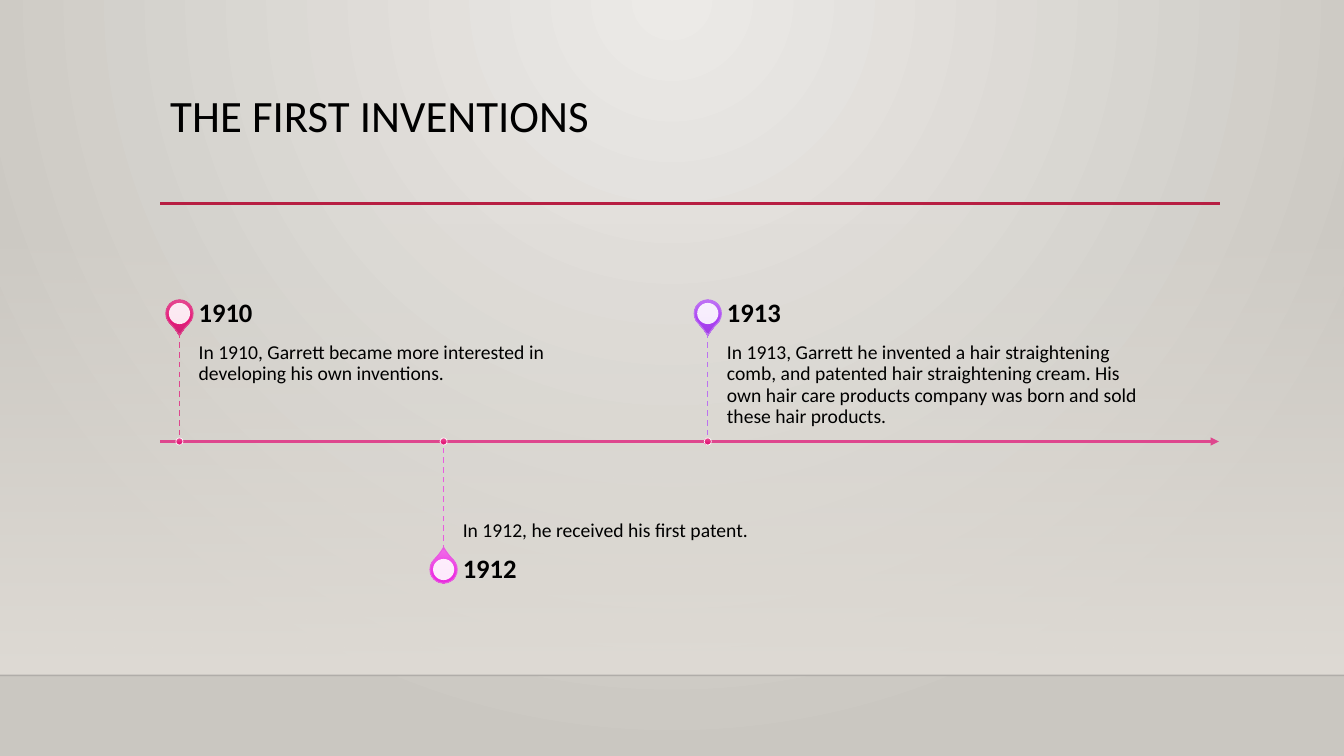
from lxml import etree
from pptx import Presentation
from pptx.dml.color import RGBColor
from pptx.enum import dml, shapes, text
from pptx.oxml.ns import qn
from pptx.util import Inches, Pt

TITLE = "THE FIRST INVENTIONS"
ROSE = [(0, "E75597"), (69, "E51A79"), (100, "CF2374")]
PINK = [(0, "F068E8"), (69, "ED2CE2"), (100, "E02BD5")]
VIOLET = [(0, "C57FF7"), (69, "AA41F3"), (100, "A13FE5")]
# year, text, line colour, pin gradient
EVENTS = [
    ("1910", "In 1910, Garrett became more interested in developing his own inventions.",
     "DE478E", ROSE),
    ("1912", "In 1912, he received his first patent.", "E85CE0", PINK),
    ("1913", "In 1913, Garrett he invented a hair straightening comb, and patented "
     "hair straightening cream. His own hair care products company was born and sold "
     "these hair products.", "BC72F0", VIOLET),
]
AXIS_Y, AXIS_LEFT, AXIS_RIGHT = 4.38, 1.59, 12.09
FIRST_X, STEP = 1.78, 2.62
STEM, YEAR_H, TEXT_W, TEXT_GAP = 1.08, 0.38, 4.36, 0.19
PIN, HOLE, DOT = 0.27, 0.21, 0.07


def rgb(value):
    return RGBColor.from_string(value)


def sub(parent, tag, **attrs):
    return etree.SubElement(parent, qn(tag), attrs)


def gradient(fill, owner, stops, circle=False):
    """Fill with (percent, colour[, alpha percent]) stops, downwards or as a circle."""
    fill.gradient()
    grad = next(owner.iter(qn("a:gradFill")))
    for child in list(grad):
        grad.remove(child)
    grad.set("rotWithShape", "0")
    stop_list = sub(grad, "a:gsLst")
    for pos, color, *alpha in stops:
        gs = sub(stop_list, "a:gs", pos=str(pos * 1000))
        clr = sub(gs, "a:srgbClr", val=color)
        if alpha:
            sub(clr, "a:alpha", val=str(alpha[0] * 1000))
    if circle:
        shade = sub(grad, "a:path", path="circle")
        sub(shade, "a:fillToRect", l="43000", t="0", r="43000", b="100000")
    else:
        sub(grad, "a:lin", ang="5400000", scaled="0")


def add_alpha(sp, percent):
    clr = next(sp._element.spPr.iter(qn("a:srgbClr")))
    sub(clr, "a:alpha", val=str(percent * 1000))


def add_line(s, x1, y1, x2, y2, color, width):
    ln = s.shapes.add_connector(shapes.MSO_CONNECTOR.STRAIGHT,
                                *map(Inches, (x1, y1, x2, y2)))
    ln.line.color.rgb = rgb(color)
    ln.line.width = Pt(width)
    sub(ln._element.spPr, "a:effectLst")
    return ln


def add_shape(s, kind, x, y, w, h, fill, line=None, width=0):
    """Add a shape; fill is a hex colour or a list of gradient stops."""
    sp = s.shapes.add_shape(kind, *map(Inches, (x, y, w, h)))
    sp.shadow.inherit = False
    if isinstance(fill, str):
        sp.fill.solid()
        sp.fill.fore_color.rgb = rgb(fill)
    else:
        gradient(sp.fill, sp._element.spPr, fill)
    if line:
        sp.line.color.rgb = rgb(line)
        sp.line.width = Pt(width)
    else:
        sp.line.fill.background()
    return sp


def add_circle(s, x, y, size, fill, line=None, width=0):
    """Add a circle centred on x, y."""
    return add_shape(s, shapes.MSO_SHAPE.OVAL, x - size / 2, y - size / 2,
                     size, size, fill, line, width)


def add_text(s, x, y, w, h, words, size, insets, anchor="TOP", bold=False):
    tf = s.shapes.add_textbox(*map(Inches, (x, y, w, h))).text_frame
    tf.word_wrap = True
    tf.vertical_anchor = text.MSO_ANCHOR[anchor]
    for side, inset in zip(("left", "top", "right", "bottom"), insets):
        setattr(tf, f"margin_{side}", Inches(inset))
    p = tf.paragraphs[0]
    p.line_spacing = 0.9
    r = p.add_run()
    r.text = words
    for name, value in dict(name="Calibri", size=Pt(size), bold=bold).items():
        setattr(r.font, name, value)
    r.font.color.rgb = rgb("000000")


def add_event(s, x, above, year, words, color, stops):
    side = -1 if above else 1
    stem_end = AXIS_Y + side * STEM
    year_mid = stem_end + side * YEAR_H / 2
    pin = add_shape(s, shapes.MSO_SHAPE.TEAR, x - PIN / 2, year_mid - PIN / 2,
                    PIN, PIN, stops, color, 0.75)
    pin.adjustments[0] = 1.15
    pin.rotation = 135 if above else 315
    add_alpha(add_circle(s, x, year_mid, HOLE, "FFFFFF"), 90)
    left = x + TEXT_GAP
    add_text(s, left, min(AXIS_Y, stem_end), TEXT_W, STEM, words, 14,
             (0, 0.1, 0.1, 0.15) if above else (0, 0.15, 0, 0.1),
             "TOP" if above else "BOTTOM")
    add_text(s, left, year_mid - YEAR_H / 2, TEXT_W, YEAR_H, year, 19,
             (0, 0, 0.13, 0), "MIDDLE", True)
    stem = add_line(s, x, stem_end, x, AXIS_Y, color, 1)
    stem.line.dash_style = dml.MSO_LINE.DASH
    add_circle(s, x, AXIS_Y, DOT, ROSE, "FFFFFF", 0.5)


def main():
    prs = Presentation()
    prs.slide_width, prs.slide_height = Inches(13.33), Inches(7.5)
    s = prs.slides.add_slide(prs.slide_layouts[6])
    gradient(s.background.fill, s._element, [(0, "ECEAE7"), (100, "CAC7C1")], circle=True)

    add_shape(s, shapes.MSO_SHAPE.RECTANGLE, 0, 2.21, 13.33, 4.49,
              [(0, "DFDBD5", 0), (100, "DFDBD5")])
    add_alpha(add_line(s, 0, 6.7, 13.33, 6.7, "000001", 1), 20)
    add_line(s, AXIS_LEFT, 2.02, 12.1, 2.02, "B71E42", 2.5)
    add_text(s, AXIS_LEFT, 0.88, 10.5, 1.15, TITLE, 32, (0.1, 0.05, 0.1, 0.05))

    axis = add_line(s, AXIS_LEFT, AXIS_Y, AXIS_RIGHT, AXIS_Y, "DE478E", 1.5)
    sub(axis.line._get_or_add_ln(), "a:tailEnd", type="triangle")
    for i, event in enumerate(EVENTS):
        add_event(s, FIRST_X + i * STEP, i % 2 == 0, *event)
    prs.save("out.pptx")


if __name__ == "__main__":
    main()
